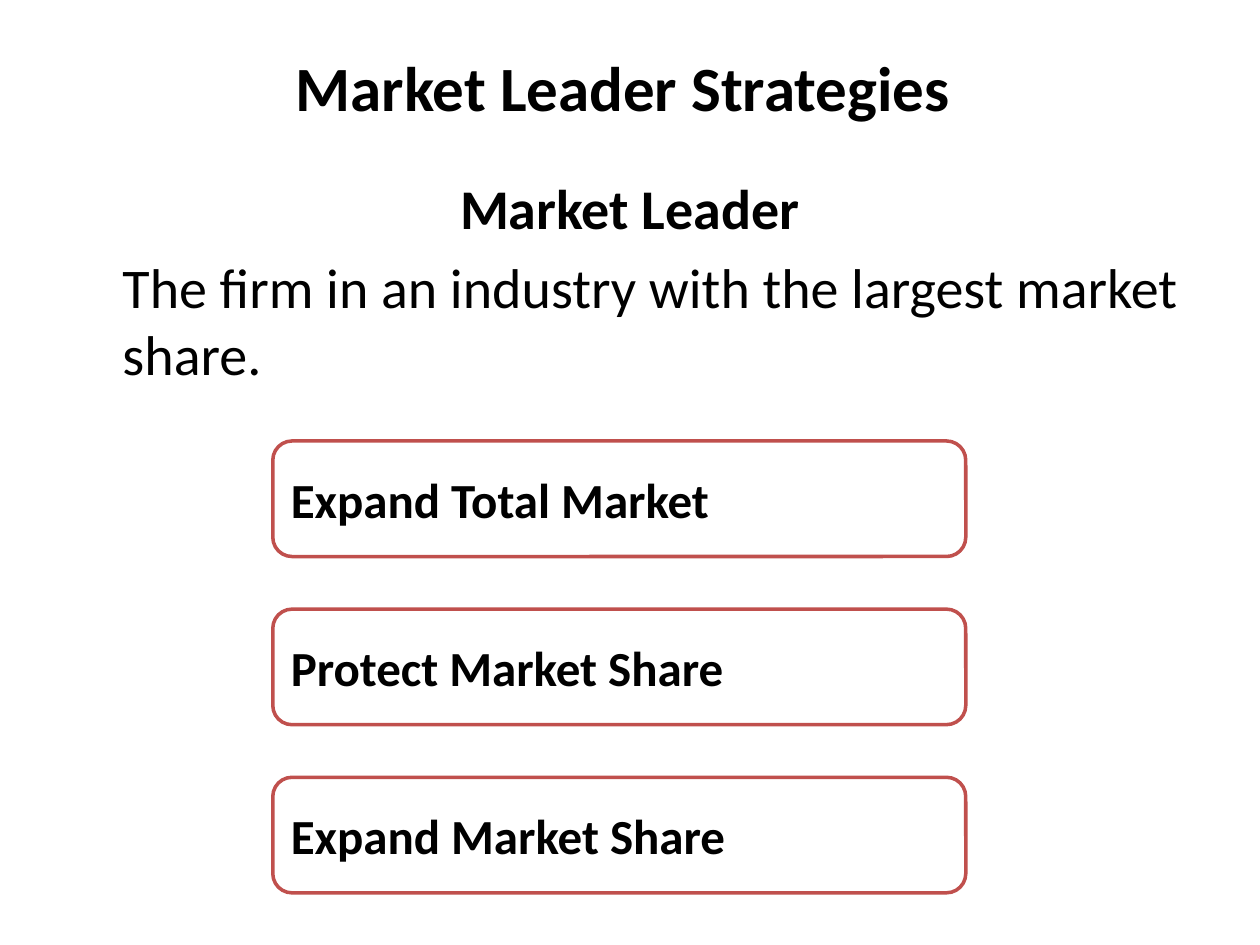
from pptx import Presentation
from pptx.dml.color import RGBColor
from pptx.enum.shapes import MSO_SHAPE as Shape
from pptx.enum.text import MSO_ANCHOR as Anchor, PP_ALIGN as Align
from pptx.util import Cm, Pt

COLORS = {"text": "000000", "fill": "FFFFFF", "border": "C0504D"}
STRATEGIES = ["Expand Total Market", "Protect Market Share", "Expand Market Share"]


class SlideBuilder:
    font = "Calibri"

    def __init__(self, slide):
        self.slide = slide

    def color(self, name):
        return RGBColor.from_string(COLORS[name])

    def format(self, p, size, bold=True, align=Align.LEFT):
        p.alignment = align
        for r in p.runs:
            r.font.name = self.font
            r.font.size = Pt(size)
            r.font.bold = bold
            r.font.color.rgb = self.color("text")

    def text_box(self, left, top, width, height, anchor=Anchor.TOP):
        sp = self.slide.shapes.add_textbox(Cm(left), Cm(top), Cm(width), Cm(height))
        tf = sp.text_frame
        tf.word_wrap = True
        tf.vertical_anchor = anchor
        return tf

    def title(self, text):
        tf = self.text_box(1.27, 0.76, 22.86, 1.98, Anchor.MIDDLE)
        tf.text = text
        self.format(tf.paragraphs[0], 36, align=Align.CENTER)

    def definition(self, term, meaning):
        tf = self.text_box(1.27, 3.38, 22.86, 5.08)
        tf.text = term
        self.format(tf.paragraphs[0], 32, align=Align.CENTER)
        p = tf.add_paragraph()
        p.text = meaning
        p.space_before = Pt(6.4)
        p._p.get_or_add_pPr().set("marL", str(Cm(0.95)))
        self.format(p, 32, bold=False)

    def strategy_box(self, text, left, top, width, height):
        sp = self.slide.shapes.add_shape(
            Shape.ROUNDED_RECTANGLE, Cm(left), Cm(top), Cm(width), Cm(height))
        sp.shadow.inherit = False
        sp.fill.solid()
        sp.fill.fore_color.rgb = self.color("fill")
        sp.line.color.rgb = self.color("border")
        sp.line.width = Pt(2)
        tf = sp.text_frame
        tf.word_wrap = True
        tf.vertical_anchor = Anchor.MIDDLE
        tf.text = text
        self.format(tf.paragraphs[0], 28)


def main():
    prs = Presentation()
    prs.slide_width, prs.slide_height = Cm(25.4), Cm(19.05)
    s = SlideBuilder(prs.slides.add_slide(prs.slide_layouts[6]))

    # Heading and definition
    s.title("Market Leader Strategies ")
    s.definition("Market Leader",
                 "The firm in an industry with the largest market share.")

    # Evenly spaced strategy boxes
    for i, strategy in enumerate(STRATEGIES):
        s.strategy_box(strategy, 5.5, 8.89 + i * 3.39, 13.97, 2.33)

    prs.save("out.pptx")


if __name__ == "__main__":
    main()
